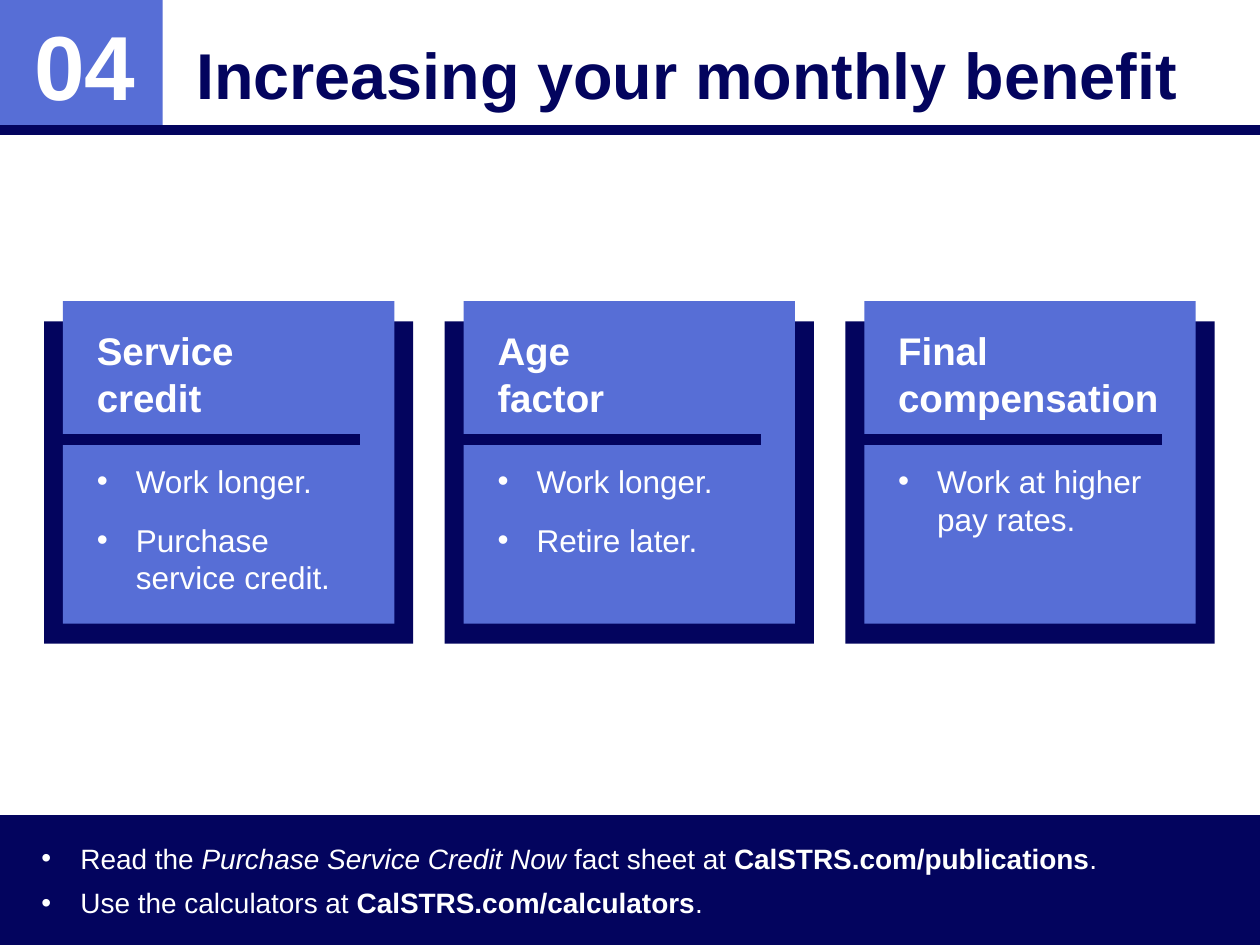
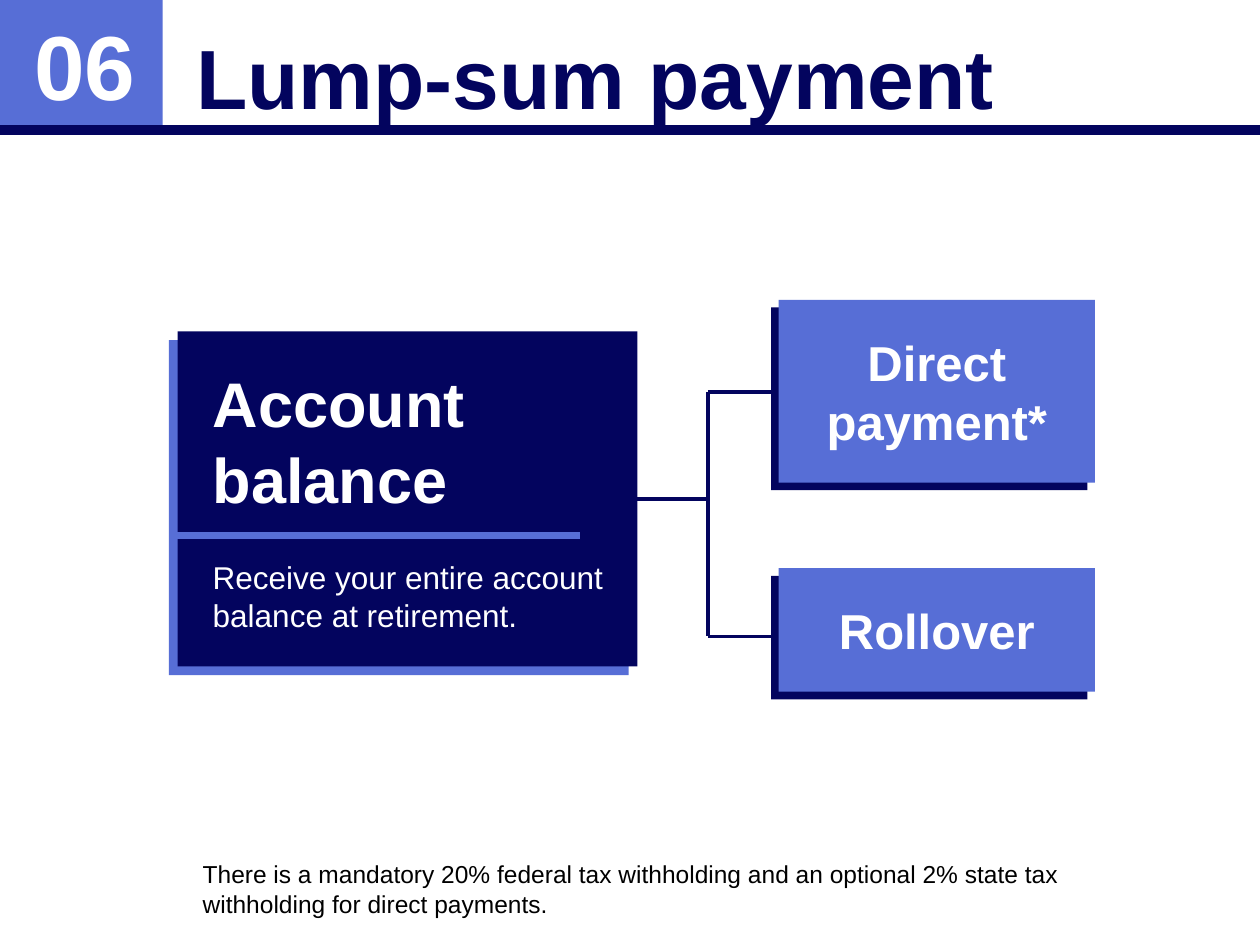
from dataclasses import dataclass

from lxml import etree
from pptx import Presentation
from pptx.dml.color import RGBColor
from pptx.enum.shapes import MSO_CONNECTOR, MSO_SHAPE
from pptx.enum.text import MSO_ANCHOR, PP_ALIGN
from pptx.oxml.ns import qn
from pptx.util import Inches, Pt

NAVY = RGBColor(0x03, 0x04, 0x5E)
BLUE = RGBColor(0x57, 0x6E, 0xD6)
WHITE = RGBColor(0xFF, 0xFF, 0xFF)
BLACK = RGBColor(0x00, 0x00, 0x00)
FONT = "Arial"

RECT = MSO_SHAPE.RECTANGLE
STRAIGHT = MSO_CONNECTOR.STRAIGHT
MIDDLE, TOP = MSO_ANCHOR.MIDDLE, MSO_ANCHOR.TOP
LEFT, CENTER = PP_ALIGN.LEFT, PP_ALIGN.CENTER

SLIDE_W, SLIDE_H = 10, 7.5
HEADER_H = 1.03
BULLET_INDENT = 0.31


@dataclass
class Run:
    text: str
    bold: bool = False
    italic: bool = False


@dataclass
class Para:
    runs: list[Run]
    size: float
    color: RGBColor = WHITE
    align: PP_ALIGN = LEFT
    after: float = 0
    spacing: float = 1.0
    indent: float = 0
    bullet: bool = False


@dataclass
class Card:
    heading: str
    points: list[str]


@dataclass
class Panel:
    x: float
    y: float
    w: float
    h: float
    fill: RGBColor
    back: RGBColor
    offset: float
    paras: list[Para]


def set_indent(p, para: Para) -> None:
    """Apply the left margin and, for list items, the bullet."""
    pPr = p._p.get_or_add_pPr()
    if para.bullet:
        pPr.set("marL", str(Inches(BULLET_INDENT)))
        pPr.set("indent", str(-Inches(BULLET_INDENT)))
        etree.SubElement(pPr, qn("a:buFont")).set("typeface", FONT)
        etree.SubElement(pPr, qn("a:buChar")).set("char", "•")
    elif para.indent:
        pPr.set("marL", str(Inches(para.indent)))


def write(tf, paras: list[Para], anchor=TOP, inset: float = 0.1) -> None:
    tf.word_wrap = True
    tf.vertical_anchor = anchor
    tf.margin_left = tf.margin_right = Inches(inset)
    for i, para in enumerate(paras):
        p = tf.paragraphs[0] if i == 0 else tf.add_paragraph()
        set_indent(p, para)
        layout = {"alignment": para.align, "line_spacing": para.spacing,
                  "space_before": Pt(0), "space_after": Pt(para.after)}
        for name, value in layout.items():
            setattr(p, name, value)
        for run in para.runs:
            for n, line in enumerate(run.text.split("\n")):
                if n:
                    p.add_line_break()
                r = p.add_run()
                r.text = line
                style = {"name": FONT, "size": Pt(para.size),
                         "bold": run.bold, "italic": run.italic}
                for name, value in style.items():
                    setattr(r.font, name, value)
                r.font.color.rgb = para.color


def add_text(s, x: float, y: float, w: float, h: float, paras: list[Para],
             anchor=TOP, inset: float = 0.1) -> None:
    box = s.shapes.add_textbox(Inches(x), Inches(y), Inches(w), Inches(h))
    write(box.text_frame, paras, anchor, inset)


def add_rect(s, x: float, y: float, w: float, h: float, fill: RGBColor):
    sp = s.shapes.add_shape(RECT, Inches(x), Inches(y), Inches(w), Inches(h))
    sp.shadow.inherit = False
    sp.fill.solid()
    sp.fill.fore_color.rgb = fill
    sp.line.fill.background()
    return sp


def add_line(s, x1: float, y1: float, x2: float, y2: float,
             color: RGBColor, width: float) -> None:
    line = s.shapes.add_connector(STRAIGHT, Inches(x1), Inches(y1),
                                  Inches(x2), Inches(y2))
    line.line.color.rgb = color
    line.line.width = Pt(width)
    etree.SubElement(line._element.spPr, qn("a:effectLst"))


def add_header(prs, number: str, title: str, title_size: float):
    """Start a slide with its section number, title and rule."""
    s = prs.slides.add_slide(prs.slide_layouts[6])
    add_rect(s, 0, 0, 1.29, HEADER_H, BLUE)
    add_line(s, 0, HEADER_H, SLIDE_W, HEADER_H, NAVY, 6)
    add_text(s, 0.17, 0.08, 1.01, 0.96,
             [Para([Run(number, bold=True)], 52, align=CENTER, spacing=0.9)],
             MIDDLE, inset=0)
    add_text(s, 1.46, 0.01, 8.37, HEADER_H,
             [Para([Run(title, bold=True)], title_size, NAVY, spacing=1.2)], MIDDLE)
    return s


def add_card(s, x: float, card: Card) -> None:
    add_rect(s, x, 2.55, 2.93, 2.56, NAVY)
    add_rect(s, x + 0.15, 2.39, 2.63, 2.56, BLUE)
    add_line(s, x + 0.05, 3.49, x + 2.51, 3.49, NAVY, 6)
    heading = Para([Run(card.heading, bold=True)], 22, after=24)
    points = [Para([Run(t)], 18, after=12, bullet=True) for t in card.points]
    add_text(s, x + 0.32, 2.55, 2.28, 2.26, [heading, *points])


def add_panel(s, panel: Panel) -> None:
    """Draw a text panel over an offset backing of the same size."""
    add_rect(s, panel.x - panel.offset, panel.y + panel.offset,
             panel.w, panel.h, panel.back)
    front = add_rect(s, panel.x, panel.y, panel.w, panel.h, panel.fill)
    write(front.text_frame, panel.paras, MIDDLE)


def option_panel(label: str, y: float, h: float) -> Panel:
    return Panel(6.18, y, 2.51, h, BLUE, NAVY, 0.06,
                 [Para([Run(label, bold=True)], 28, align=CENTER)])


CARDS = [
    Card("Service \ncredit", ["Work longer.", "Purchase service credit."]),
    Card("Age \nfactor", ["Work longer.", "Retire later."]),
    Card("Final compensation", ["Work at higher pay rates."]),
]

RESOURCES = [
    [Run("Read the "), Run("Purchase Service Credit Now ", italic=True),
     Run("fact sheet at "), Run("CalSTRS.com/publications", bold=True), Run(".")],
    [Run("Use the calculators at "), Run("CalSTRS.com/calculators", bold=True),
     Run(".")],
]

ACCOUNT = Panel(1.41, 2.63, 3.65, 2.66, NAVY, BLUE, 0.07, [
    Para([Run("Account balance", bold=True)], 36, after=24, indent=0.18),
    Para([Run("Receive your entire account balance at retirement.")], 18,
         indent=0.18),
])
OPTIONS = [option_panel("Direct payment*", 2.38, 1.45),
           option_panel("Rollover", 4.51, 0.98)]
TAX_NOTE = ("There is a mandatory 20% federal tax withholding and an optional "
            "2% state tax withholding for direct payments.")


def benefit_slide(prs) -> None:
    s = add_header(prs, "04", "Increasing your monthly benefit", 37)
    for i, card in enumerate(CARDS):
        add_card(s, 0.35 + 3.18 * i, card)

    # Resource band
    add_rect(s, 0, 6.47, SLIDE_W, SLIDE_H - 6.47, NAVY)
    add_text(s, 0.23, 6.63, 9.59, 0.72,
             [Para(runs, 16, after=6, bullet=True) for runs in RESOURCES])


def lump_sum_slide(prs) -> None:
    s = add_header(prs, "06", "Lump-sum payment", 48)

    # Bracket from the account to its two options
    fork_x, upper_y, lower_y = 5.62, 3.11, 5.05
    add_line(s, 4.6, 3.96, fork_x, 3.96, NAVY, 2)
    add_line(s, fork_x, upper_y, fork_x, lower_y, NAVY, 2)
    for y in (upper_y, lower_y):
        add_line(s, fork_x, y, 6.37, y, NAVY, 2)

    for panel in (ACCOUNT, *OPTIONS):
        add_panel(s, panel)
    add_line(s, 1.37, 4.25, 4.6, 4.25, BLUE, 4)

    # Withholding note
    add_text(s, 1.51, 6.77, 7.18, 0.57, [Para([Run(TAX_NOTE)], 14, BLACK)])


def main() -> None:
    prs = Presentation()
    prs.slide_width, prs.slide_height = Inches(SLIDE_W), Inches(SLIDE_H)
    benefit_slide(prs)
    lump_sum_slide(prs)
    prs.save("out.pptx")


if __name__ == "__main__":
    main()
